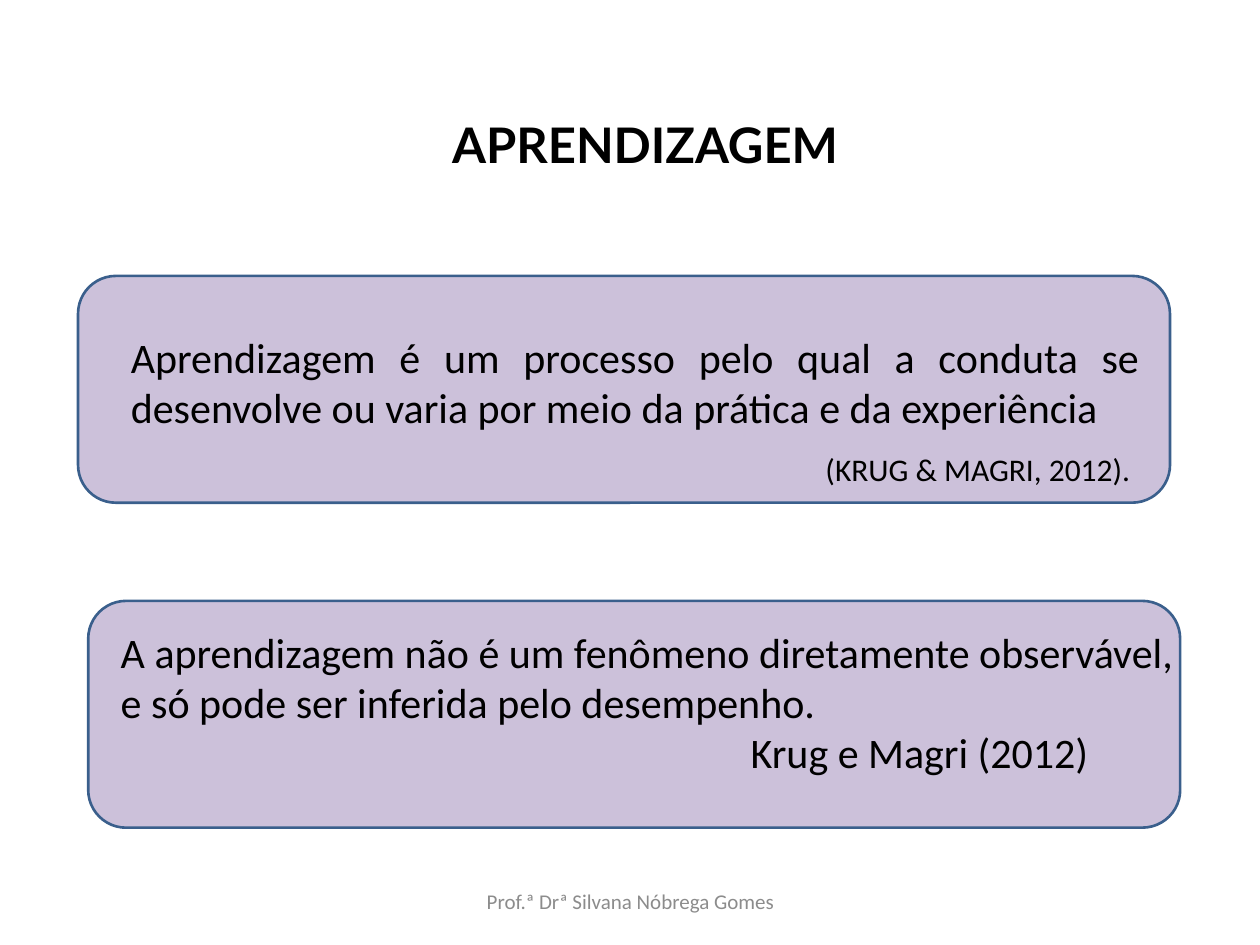
"""Builds the slide that defines learning with two quoted statements."""
from pptx import Presentation
from pptx.dml.color import RGBColor
from pptx.enum import shapes, text
from pptx.util import Pt

BLACK = RGBColor(0x00, 0x00, 0x00)
GRAY = RGBColor(0x8C, 0x8C, 0x8C)
LILAC = RGBColor(0xCC, 0xC1, 0xDA)
BLUE = RGBColor(0x3A, 0x5F, 0x8C)
ALIGN = text.PP_ALIGN
ANCHOR = text.MSO_ANCHOR


class SlideBuilder:
    def __init__(self, slide, font="Calibri", size=24):
        self.slide = slide
        self.font = font
        self.size = size

    def style_text(self, p, words, align=ALIGN.LEFT, size=None, color=BLACK, font=None, bold=False):
        p.text = words
        p.alignment = align
        for r in p.runs:
            r.font.name = font or self.font
            r.font.size = Pt(size or self.size)
            r.font.color.rgb = color
            r.font.bold = bold

    def title(self, box, words, **style):
        s = self.slide.shapes.title
        s.left, s.top, s.width, s.height = map(Pt, box)
        tf = s.text_frame
        tf.auto_size = text.MSO_AUTO_SIZE.NONE
        tf.vertical_anchor = ANCHOR.TOP
        self.style_text(tf.paragraphs[0], words, ALIGN.CENTER, **style)

    def panel(self, left, top, width=624, height=129.6):
        s = self.slide.shapes.add_shape(
            shapes.MSO_SHAPE.ROUNDED_RECTANGLE, Pt(left), Pt(top), Pt(width), Pt(height))
        s.shadow.inherit = False
        s.fill.solid()
        s.fill.fore_color.rgb = LILAC
        s.line.color.rgb = BLUE
        s.line.width = Pt(1.5)

    def label(self, box, words, anchor=ANCHOR.TOP, **style):
        tf = self.slide.shapes.add_textbox(*map(Pt, box)).text_frame
        tf.word_wrap = True
        tf.vertical_anchor = anchor
        self.style_text(tf.paragraphs[0], words, **style)
        return tf

    def indented(self, tf, words, indent):
        p = tf.add_paragraph()
        self.style_text(p, words)
        p._p.get_or_add_pPr().set("marL", str(Pt(indent)))


def main():
    prs = Presentation()
    prs.slide_width, prs.slide_height = Pt(720), Pt(540)
    b = SlideBuilder(prs.slides.add_slide(prs.slide_layouts[5]))
    b.panel(50.4, 343.4)
    b.panel(44.6, 157.7)
    b.title((101.5, 61.9, 534.2, 41), "APRENDIZAGEM", size=28, font="Lato", bold=True)
    tf = b.label((61.9, 354.2, 618.5, 94.3),
                 "A aprendizagem não é um fenômeno diretamente observável, "
                 "e só pode ser inferida pelo desempenho.")
    b.indented(tf, "Krug e Magri (2012)", 360)
    b.label((246.2, 500.4, 228.2, 28.8), "Prof.ª Drª Silvana Nóbrega Gomes",
            ANCHOR.MIDDLE, align=ALIGN.CENTER, size=12, color=GRAY)
    b.label((67.7, 185.8, 590.4, 65.5),
            "Aprendizagem é um processo pelo qual a conduta se desenvolve "
            "ou varia por meio da prática e da experiência", align=ALIGN.JUSTIFY)
    b.label((427.7, 253.4, 225.4, 28.8), "(KRUG & MAGRI, 2012).", align=ALIGN.RIGHT, size=18)
    prs.save("out.pptx")


if __name__ == "__main__":
    main()
